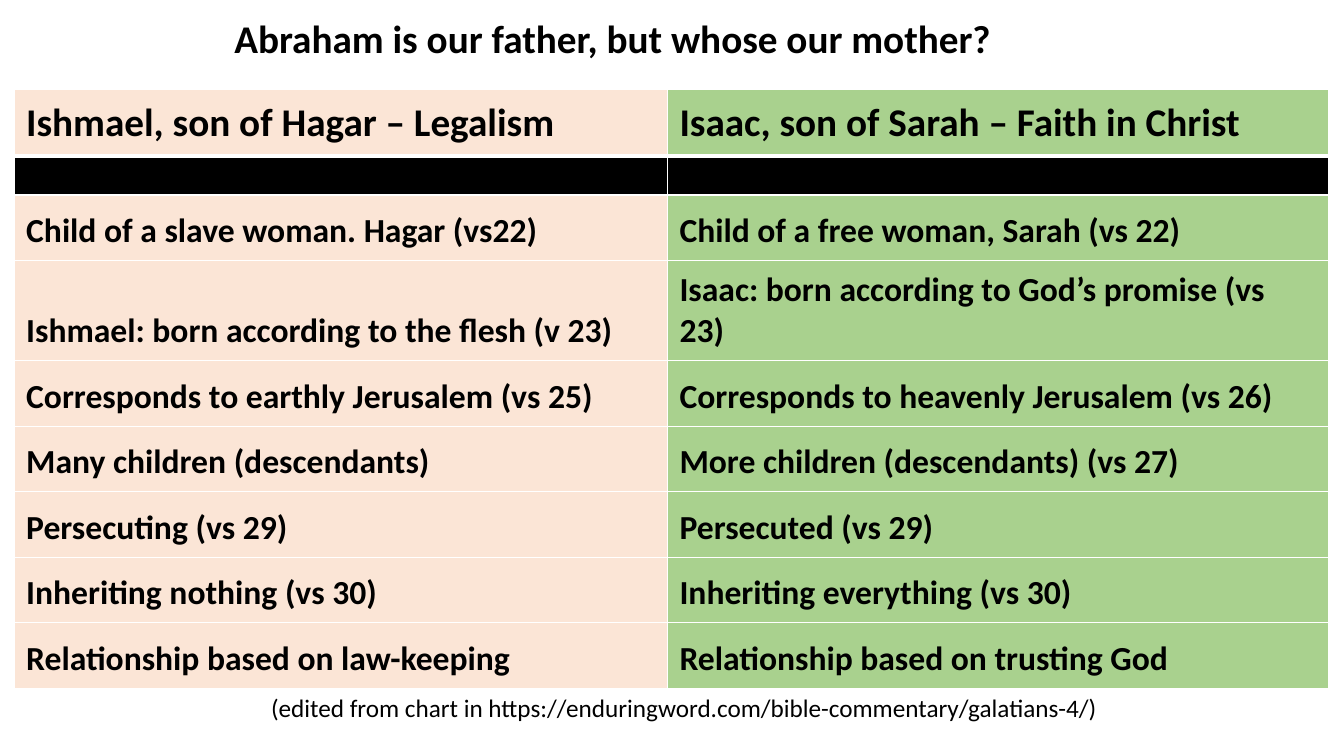
from lxml import etree
from pptx import Presentation
from pptx.dml.color import RGBColor
from pptx.enum.text import MSO_ANCHOR as Anchor, MSO_AUTO_SIZE as AutoSize, PP_ALIGN as Align
from pptx.oxml.ns import qn
from pptx.util import Inches, Pt

FONT = "Calibri"
BLACK, WHITE = "000000", "FFFFFF"
SIDE_FILLS = ("FBE5D6", "A9D18E")
SIDE_WIDTHS = (6.48, 6.56)
ROW, DIVIDER_ROW, TWO_LINE_ROW = 0.65, 0.39, 0.99

# Each entry: row height, Ishmael's side, Isaac's side
COMPARISON = [
    (ROW, "Ishmael, son of Hagar – Legalism", "Isaac, son of Sarah – Faith in Christ"),
    (DIVIDER_ROW, "", ""),
    (ROW, "Child of a slave woman. Hagar (vs22)", "Child of a free woman, Sarah (vs 22)"),
    (TWO_LINE_ROW, "Ishmael: born according to the flesh (v 23)",
     "Isaac: born according to God’s promise (vs 23)"),
    (ROW, "Corresponds to earthly Jerusalem (vs 25)",
     "Corresponds to heavenly Jerusalem (vs 26)"),
    (ROW, "Many children (descendants)", "More children (descendants) (vs 27)"),
    (ROW, "Persecuting (vs 29)", "Persecuted (vs 29)"),
    (ROW, "Inheriting nothing (vs 30)", "Inheriting everything (vs 30)"),
    (ROW, "Relationship based on law-keeping", "Relationship based on trusting God"),
]


def rgb(code):
    return RGBColor.from_string(code)


def write(frame, text, size, bold=False, align=Align.LEFT):
    frame.text = text
    line = frame.paragraphs[0]
    line.alignment = align
    for run in line.runs:
        run.font.name, run.font.size, run.font.bold = FONT, Pt(size), bold
        run.font.color.rgb = rgb(BLACK)


def place(box, left, top, width, height):
    box.left, box.top = Inches(left), Inches(top)
    box.width, box.height = Inches(width), Inches(height)


def set_borders(cell, top, bottom):
    """White rules around a cell; the schema wants them ahead of the fill."""
    properties = cell._tc.get_or_add_tcPr()
    weights = {"a:lnL": 1, "a:lnR": 1, "a:lnT": top, "a:lnB": bottom}
    for position, (side, weight) in enumerate(weights.items()):
        rule = etree.Element(qn(side), w=str(Pt(weight)))
        fill = etree.SubElement(rule, qn("a:solidFill"))
        etree.SubElement(fill, qn("a:srgbClr"), val=WHITE)
        properties.insert(position, rule)


def fill_cell(cell, text, color, size):
    cell.fill.solid()
    cell.fill.fore_color.rgb = rgb(color)
    cell.vertical_anchor = Anchor.BOTTOM
    cell.margin_left = cell.margin_right = Inches(0.12)
    cell.margin_top = cell.margin_bottom = Inches(0.09 if text else 0.04)
    write(cell.text_frame, text, size, bold=True)


def add_comparison(slide, left, top):
    heights = [entry[0] for entry in COMPARISON]
    table = slide.shapes.add_table(
        len(COMPARISON), len(SIDE_WIDTHS), Inches(left), Inches(top),
        Inches(sum(SIDE_WIDTHS)), Inches(sum(heights))).table
    for column, width in zip(table.columns, SIDE_WIDTHS):
        column.width = Inches(width)
    for index, (height, *sides) in enumerate(COMPARISON):
        table.rows[index].height = Inches(height)
        for side, text in enumerate(sides):
            cell = table.cell(index, side)
            fill_cell(cell, text, SIDE_FILLS[side] if text else BLACK,
                      28 if index == 0 else 24)
            # A heavier rule runs under the heading row
            set_borders(cell, top=3 if index == 1 else 1, bottom=3 if index == 0 else 1)


def add_heading(slide, text):
    heading = slide.shapes.title
    place(heading, 1.26, 0.09, 9.63, 0.57)
    frame = heading.text_frame
    frame.auto_size, frame.word_wrap = AutoSize.NONE, True
    frame.vertical_anchor = Anchor.TOP
    write(frame, text, 28, bold=True, align=Align.CENTER)


def add_credit(slide, text):
    credit = slide.shapes.add_textbox(0, 0, 0, 0)
    place(credit, 2.59, 6.82, 8.64, 0.4)
    credit.text_frame.word_wrap = True
    write(credit.text_frame, text, 18)


def main():
    deck = Presentation()
    deck.slide_width, deck.slide_height = Inches(13.33), Inches(7.5)
    slide = deck.slides.add_slide(deck.slide_layouts[5])
    add_heading(slide, "Abraham is our father, but whose our mother?")
    add_comparison(slide, 0.14, 0.89)
    add_credit(slide, "(edited from chart in https://enduringword.com/bible-commentary/galatians-4/)")
    deck.save("out.pptx")


if __name__ == "__main__":
    main()
